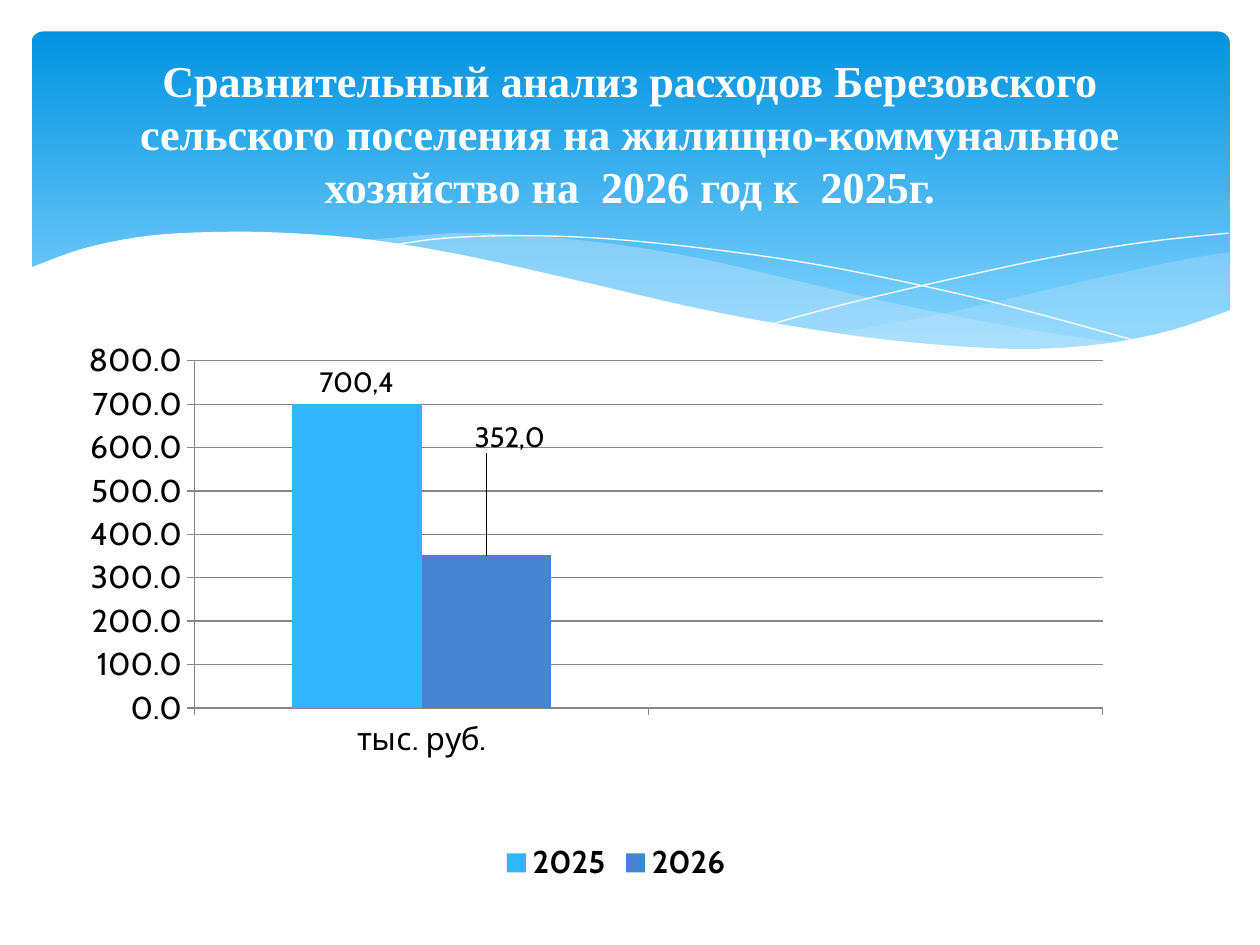
import pptx
import pptx.chart.data
import pptx.dml.color
import pptx.enum.chart
import pptx.enum.shapes
import pptx.enum.text
import pptx.oxml
import pptx.util
from pptx.oxml.ns import qn
from pptx.util import Inches

TITLE = ("Сравнительный анализ расходов Березовского сельского поселения "
         "на жилищно-коммунальное хозяйство на  2026 год к  2025г.")
TITLE_FONT = {"name": "Times New Roman", "size": pptx.util.Pt(25.2), "bold": True}
CHART_FONT = {"name": "Cabin", "size": pptx.util.Pt(18)}
LABEL_FONT = {"name": "Cabin", "size": pptx.util.Pt(16)}
CATEGORIES = ["тыс. руб.", ""]
SERIES = [
    {"name": "2025", "values": [700.4, None], "color": "31B6FD", "label": "700,4", "shift": None},
    {"name": "2026", "values": [352, None], "color": "4584D3", "label": "352,0", "shift": (0.02, -0.16)},
]
PLOT = {"x": 0.137, "y": 0.128, "w": 0.782, "h": 0.574}
GRADIENT = [(0, "0293E0"), (0.9, "83D3FE")]

WAVES = [
    {"fill": "C6E7FC", "alpha": 29, "curves": [
        [(9.76, 2), (9.35, 2.07), (8.61, 2.23), (7.53, 2.48), (6.61, 2.65)],
        [(6.61, 2.65), (7.05, 2.71), (7.57, 2.76), (8.14, 2.78), (8.72, 2.74), (9.21, 2.65), (9.76, 2.47)]]},
    {"fill": "C6E7FC", "alpha": 40, "curves": [
        [(8.93, 2.73), (8.07, 2.6), (7.06, 2.4), (6.29, 2.22), (5.55, 2.05), (4.89, 1.94),
         (4.2, 1.87), (3.61, 1.85), (2.86, 1.91)],
        [(2.86, 1.91), (3.62, 2.03), (4.49, 2.22), (5.3, 2.4), (6.18, 2.58), (6.95, 2.7),
         (7.61, 2.77), (8.28, 2.78), (8.93, 2.73)]]},
    {"line": "FFFFFF", "curves": [
        [(3.09, 1.95), (3.53, 1.89), (4.16, 1.87), (4.89, 1.9), (5.82, 2), (6.65, 2.13),
         (7.6, 2.33), (8.31, 2.51), (9.07, 2.72)]]},
    {"line": "FFFFFF", "curves": [
        [(6.13, 2.57), (6.72, 2.41), (7.48, 2.23), (8.36, 2.04), (9.1, 1.92), (9.75, 1.85)]]},
    {"fill": "FFFFFF", "curves": [
        [(9.77, 2.46), (9.3, 2.62), (8.75, 2.73), (8.09, 2.77), (7.26, 2.72), (6.48, 2.62),
         (5.55, 2.45), (4.47, 2.2), (3.65, 2.02), (2.92, 1.9), (2.3, 1.85), (1.77, 1.84),
         (1.19, 1.87), (0.67, 1.97), (0.23, 2.13)],
        [(0.23, 3.29), (9.77, 3.29)]]},
]


def rgb(value):
    return pptx.dml.color.RGBColor.from_string(value)


def paint(fill, color):
    fill.solid()
    fill.fore_color.rgb = rgb(color)


def set_font(font, formats, color="000000"):
    for key, value in formats.items():
        setattr(font, key, value)
    font.color.rgb = rgb(color)


def smooth(points, steps=5):
    if len(points) < 3:
        return points
    padded = [points[0], *points, points[-1]]
    result = [points[0]]
    for a, b, c, d in zip(padded, padded[1:], padded[2:], padded[3:]):
        for i in range(1, steps + 1):
            t = i / steps
            result.append(tuple(
                (2 * q + (r - p) * t + (2 * p - 5 * q + 4 * r - u) * t ** 2
                 + (3 * q - p - 3 * r + u) * t ** 3) / 2
                for p, q, r, u in zip(a, b, c, d)))
    return result


def add_wave(s, wave):
    points = [(Inches(x), Inches(y)) for curve in wave["curves"] for x, y in smooth(curve)]
    builder = s.shapes.build_freeform(*points[0])
    builder.add_line_segments(points[1:], close="fill" in wave)
    sp = builder.convert_to_shape()
    sp.shadow.inherit = False
    if "fill" in wave:
        paint(sp.fill, wave["fill"])
        sp.line.fill.background()
    else:
        sp.fill.background()
        sp.line.color.rgb = rgb(wave["line"])
        sp.line.width = 0
    if "alpha" in wave:
        color = sp.fill._xPr.find(".//" + qn("a:srgbClr"))
        color.append(pptx.oxml.parse_xml(
            f'<a:alpha {pptx.oxml.ns.nsdecls("a")} val="{wave["alpha"] * 1000}"/>'))


def manual_layout(values, inner=False):
    items = [("layoutTarget", "inner"), ("xMode", "edge"), ("yMode", "edge")] if inner else []
    body = "".join(f'<c:{k} val="{v}"/>' for k, v in items + list(values.items()))
    return pptx.oxml.parse_xml(f'<c:layout {pptx.oxml.ns.nsdecls("c")}>'
                               f'<c:manualLayout>{body}</c:manualLayout></c:layout>')


def replace_layout(parent, layout, index):
    old = parent.find(qn("c:layout"))
    if old is not None:
        parent.remove(old)
    parent.insert(index, layout)


def add_chart(s):
    data = pptx.chart.data.CategoryChartData(number_format="#,##0.0")
    data.categories = CATEGORIES
    for item in SERIES:
        data.add_series(item["name"], item["values"])
    chart = s.shapes.add_chart(
        pptx.enum.chart.XL_CHART_TYPE.COLUMN_CLUSTERED,
        Inches(0.28), Inches(2.25), Inches(9.22), Inches(4.8), data).chart
    set_font(chart.font, CHART_FONT)
    chart.has_title = False
    chart.has_legend = True
    chart.legend.position = pptx.enum.chart.XL_LEGEND_POSITION.BOTTOM
    chart.legend.include_in_layout = False
    set_font(chart.legend.font, {**CHART_FONT, "bold": True})

    axis = chart.value_axis
    axis.minimum_scale, axis.maximum_scale, axis.major_unit = 0, 800, 100
    axis.tick_labels.number_format = "#,##0.0"
    axis.tick_labels.number_format_is_linked = False
    axis.has_major_gridlines = True
    for line in (axis.major_gridlines.format.line, axis.format.line, chart.category_axis.format.line):
        line.color.rgb = rgb("868686")
        line.width = pptx.util.Pt(0.75)

    plot = chart.plots[0]
    plot.gap_width, plot.overlap, plot.vary_by_categories = 150, 0, False
    for series, item in zip(plot.series, SERIES):
        paint(series.format.fill, item["color"])
        labels = series.data_labels
        labels.show_value = True
        labels.number_format = "#,##0.0"
        labels.number_format_is_linked = False
        set_font(labels.font, LABEL_FONT)
        label = series.points[0].data_label
        r = label.text_frame.paragraphs[0].add_run()
        r.text = item["label"]
        set_font(r.font, LABEL_FONT)
        label.position = pptx.enum.chart.XL_LABEL_POSITION.OUTSIDE_END
        if item["shift"]:
            replace_layout(labels._element.find(qn("c:dLbl")),
                           manual_layout(dict(zip("xy", item["shift"]))), 1)
    replace_layout(chart._chartSpace.chart.plotArea, manual_layout(PLOT, inner=True), 0)


def add_header(s):
    sp = s.shapes.add_shape(pptx.enum.shapes.MSO_SHAPE.ROUNDED_RECTANGLE,
                            Inches(0.25), Inches(0.25), Inches(9.51), Inches(2.7))
    sp.adjustments[0] = 0.034
    sp.shadow.inherit = False
    sp.line.fill.background()
    sp.fill.gradient()
    sp.fill.gradient_angle = 270
    for stop, (position, color) in zip(sp.fill.gradient_stops, GRADIENT):
        stop.position = position
        stop.color.rgb = rgb(color)


def add_title(s):
    tf = s.shapes.add_textbox(Inches(0.5), Inches(0.37), Inches(9), Inches(1.37)).text_frame
    tf.word_wrap = True
    tf.vertical_anchor = pptx.enum.text.MSO_ANCHOR.MIDDLE
    p = tf.paragraphs[0]
    p.alignment = pptx.enum.text.PP_ALIGN.CENTER
    r = p.add_run()
    r.text = TITLE
    set_font(r.font, TITLE_FONT, "FFFFFF")


def main():
    prs = pptx.Presentation()
    prs.slide_width, prs.slide_height = Inches(10), Inches(7.5)
    s = prs.slides.add_slide(prs.slide_layouts[6])
    add_header(s)
    for wave in WAVES:
        add_wave(s, wave)
    add_chart(s)
    add_title(s)
    prs.save("out.pptx")


if __name__ == "__main__":
    main()
